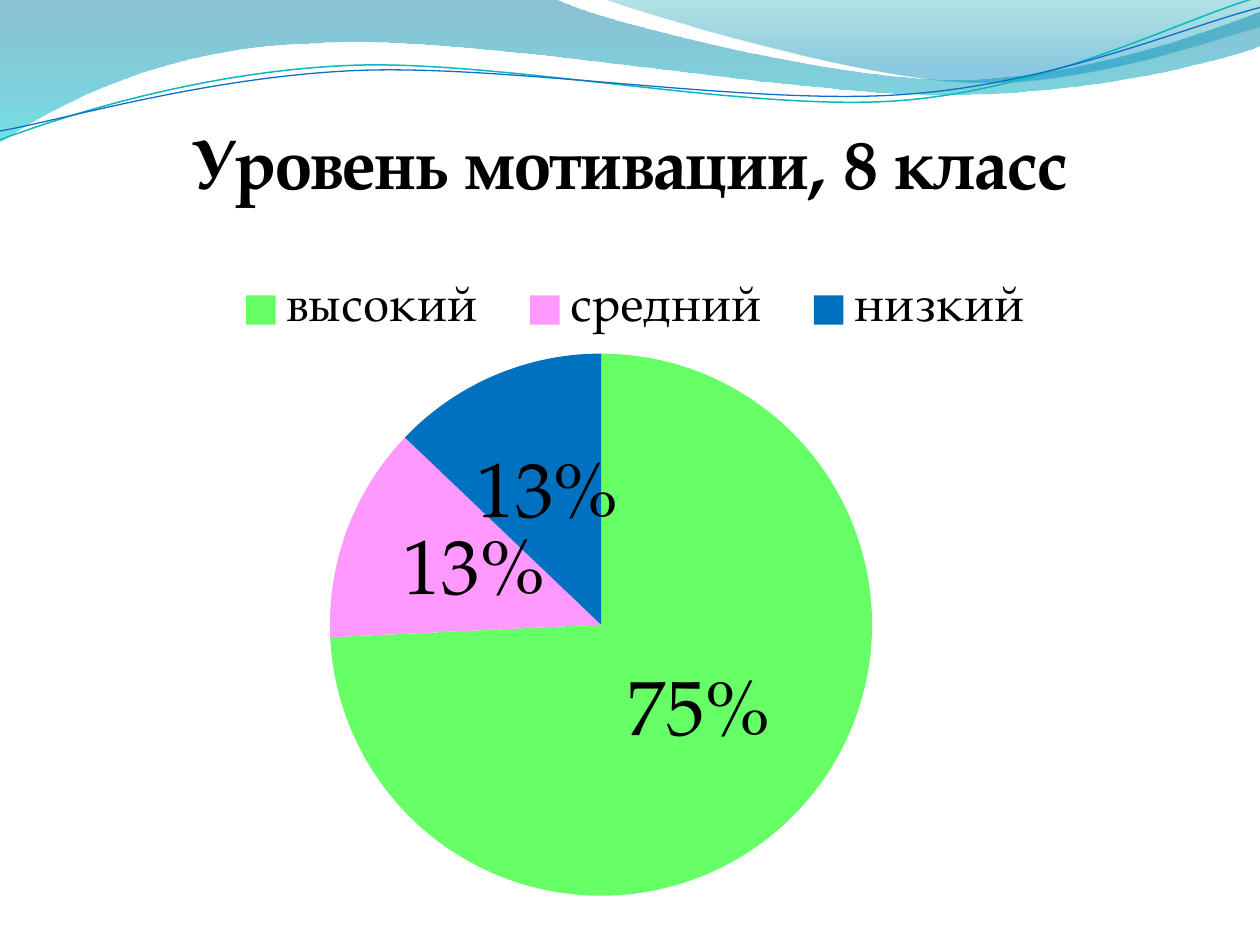
from math import cos, radians, sin

from lxml import etree
from pptx import Presentation
from pptx.chart.data import CategoryChartData
from pptx.dml.color import RGBColor
from pptx.enum.chart import XL_CHART_TYPE, XL_LABEL_POSITION, XL_LEGEND_POSITION
from pptx.oxml import parse_xml
from pptx.oxml.ns import nsdecls, qn
from pptx.util import Inches, Pt

PIE = XL_CHART_TYPE.PIE
TOP = XL_LEGEND_POSITION.TOP
CENTER = XL_LABEL_POSITION.CENTER

FONT = "TeX Gyre Pagella"
BLACK = RGBColor(0x00, 0x00, 0x00)
GREEN = RGBColor(0x66, 0xFF, 0x66)
PINK = RGBColor(0xFF, 0x99, 0xFF)
BLUE = RGBColor(0x00, 0x70, 0xC0)
STEEL = RGBColor(0x00, 0x74, 0xA1)
CYAN = RGBColor(0x00, 0xC6, 0xCF)
TEAL = RGBColor(0x00, 0xA1, 0xA9)
AZURE = RGBColor(0x00, 0x8B, 0xBF)
AQUA = RGBColor(0x0A, 0xB8, 0xBF)
NAVY = RGBColor(0x0F, 0x6F, 0xC6)

LEVELS = [("высокий", 75, GREEN), ("средний", 13, PINK), ("низкий", 13, BLUE)]
TILT = -2.7
PIVOT = (5, 0.58)

# Each path is a start point, then lines (1 point) and Bezier curves (3 points).
# Each gradient stop is a position, a colour and an opacity in percent.
WAVES = [
    ([[(0, 0)], [(4.4, -0.01)], [(4.76, 0.17), (6.64, 0.63), (7.58, 0.63)],
      [(8.53, 0.63), (9.58, 0.26), (10, 0.09)], [(10.01, 0.36)],
      [(9.83, 0.44), (8.7, 0.76), (7.46, 0.75)],
      [(6.22, 0.75), (3.82, 0.28), (2.57, 0.34)],
      [(1.29, 0.36), (0.46, 0.83), (-0.01, 1.13)]],
     [(0, STEEL, 45), (1, CYAN, 55)]),
    ([[(4.79, -0.01)], [(5.09, 0.11), (6.82, 0.62), (7.69, 0.65)],
      [(8.56, 0.69), (9.61, 0.32), (10, 0.21)], [(10, 0)]],
     [(0, TEAL, 30), (0.8, AZURE, 45)]),
]
STRANDS = [
    ([[(0, 1.11)], [(0.48, 0.93), (1.58, 0.57), (2.77, 0.52)],
      [(3.95, 0.47), (5.93, 0.89), (7.13, 0.8)],
      [(8.33, 0.71), (9.38, 0.15), (9.98, -0.02)]],
     AQUA, 0.85),
    ([[(0, 1.04)], [(0.47, 0.96), (1.64, 0.61), (2.83, 0.56)],
      [(4.03, 0.51), (5.97, 0.84), (7.17, 0.75)],
      [(8.36, 0.67), (9.41, 0.21), (10, 0.06)]],
     NAVY, 0.75),
]


def turn(point, angle):
    """Rotate a point clockwise about the pivot."""
    x, y = point[0] - PIVOT[0], point[1] - PIVOT[1]
    c, s = cos(radians(angle)), sin(radians(angle))
    return PIVOT[0] + x * c - y * s, PIVOT[1] + x * s + y * c


def add_path(slide, parts, left, top, close):
    """Build a freeform on the end points, then bend its sides into curves."""
    parts = [[(left + Inches(x), top + Inches(y)) for x, y in part]
             for part in parts]
    ends = [part[-1] for part in parts]
    pen = slide.shapes.build_freeform(*ends[0])
    pen.add_line_segments(ends[1:], close=close)
    shape = pen.convert_to_shape()
    shape.shadow.inherit = False
    sides = list(shape.element.iter(qn("a:lnTo")))
    for side, part in zip(sides, parts[1:]):
        if len(part) == 3:
            side.tag = qn("a:cubicBezTo")
            for spot, (x, y) in enumerate(part[:2]):
                knot = etree.Element(qn("a:pt"), x=str(x - shape.left),
                                     y=str(y - shape.top))
                side.insert(spot, knot)
    return shape


def add_wave(slide, parts, stops, left, top):
    shape = add_path(slide, parts, left, top, True)
    shape.line.fill.background()
    shape.fill.gradient()
    shape.fill.gradient_angle = 270
    for stop, (place, color, alpha) in zip(shape.fill.gradient_stops, stops):
        stop.position = place
        stop.color.rgb = color
    tones = shape.element.spPr.iter(qn("a:srgbClr"))
    for tone, (place, color, alpha) in zip(tones, stops):
        etree.SubElement(tone, qn("a:alpha"), val=str(alpha * 1000))


def add_strand(slide, parts, color, width, left, top):
    level = [[turn(point, -TILT) for point in part] for part in parts]
    shape = add_path(slide, level, left, top, False)
    shape.rotation = TILT
    shape.fill.background()
    shape.line.color.rgb = color
    shape.line.width = Pt(width)


def add_banner(slide, left, top):
    for parts, stops in WAVES:
        add_wave(slide, parts, stops, left, top)
    for parts, color, width in STRANDS:
        add_strand(slide, parts, color, width, left, top)


def style(font, size, bold=False, color=BLACK):
    font.name = FONT
    font.size = Pt(size)
    font.bold = bold
    font.color.rgb = color


def write(frame, text, **look):
    run = frame.paragraphs[0].add_run()
    run.text = text
    style(run.font, **look)


def layout(x, y, w, h, inner=False):
    """Make a chart layout from shares of the chart's size."""
    target = '<c:layoutTarget val="inner"/>' if inner else ""
    sizes = "".join(f'<c:{tag} val="{val}"/>'
                    for tag, val in zip("xywh", (x, y, w, h)))
    return parse_xml(
        f'<c:layout {nsdecls("c")}><c:manualLayout>{target}'
        f'<c:xMode val="edge"/><c:yMode val="edge"/>{sizes}'
        '</c:manualLayout></c:layout>')


def add_pie(slide, title, left, top, width, height):
    data = CategoryChartData()
    data.categories = [name for name, share, color in LEVELS]
    data.add_series("Series 1", [share for name, share, color in LEVELS])
    chart = slide.shapes.add_chart(PIE, left, top, width, height, data).chart
    style(chart.font, 10)
    chart.has_title = True
    write(chart.chart_title.text_frame, title, size=40, bold=True)

    chart.has_legend = True
    legend = chart.legend
    legend.position = TOP
    legend.include_in_layout = False
    style(legend.font, 28)
    tree = chart.element
    place = tree.find(".//" + qn("c:legendPos"))
    place.addnext(layout(0.13, 0.21, 0.75, 0.1))

    area = tree.find(".//" + qn("c:plotArea"))
    for old in area.findall(qn("c:layout")):
        area.remove(old)
    area.insert(0, layout(0.035, 0.313, 0.879, 0.658, inner=True))

    plot = chart.plots[0]
    plot.vary_by_categories = True
    series = plot.series[0]
    for index, (name, share, color) in enumerate(LEVELS):
        fill = series.points[index].format.fill
        fill.solid()
        fill.fore_color.rgb = color
    labels = series.data_labels
    labels.show_value = True
    labels.number_format = '0"%"'
    labels.number_format_is_linked = False
    labels.position = CENTER
    style(labels.font, 44)


def main():
    deck = Presentation()
    deck.slide_width, deck.slide_height = Inches(10), Inches(7.5)
    slide = deck.slides.add_slide(deck.slide_layouts[6])
    add_banner(slide, Inches(0), Inches(0))
    add_pie(slide, "Уровень мотивации, 8 класс",
            Inches(0.5), Inches(0.76), Inches(9), Inches(6.54))
    deck.save("out.pptx")


if __name__ == "__main__":
    main()
